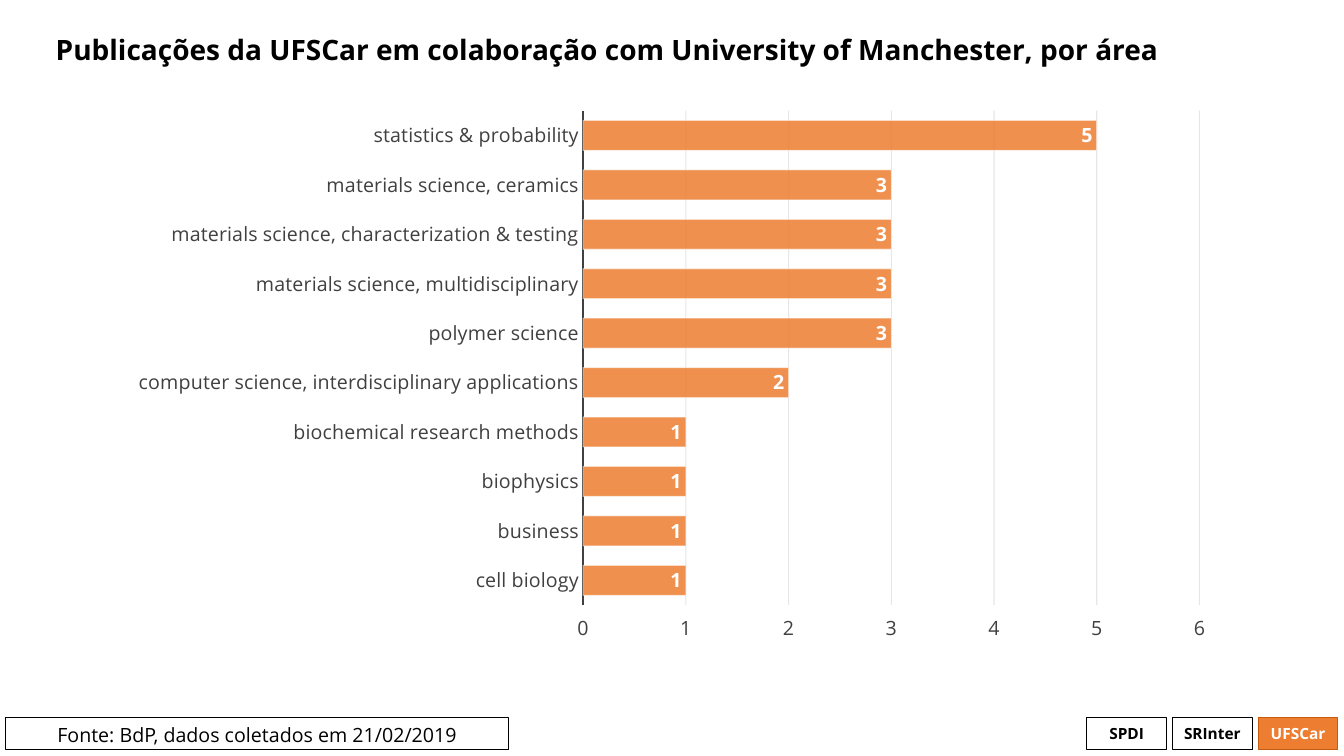
"""Build a slide with a bar chart of joint publications by research area."""
from lxml import etree
from pptx import Presentation
from pptx.chart.data import CategoryChartData
from pptx.dml.color import RGBColor
from pptx.enum import chart as ch, shapes, text
from pptx.oxml import parse_xml
from pptx.oxml.ns import nsdecls, qn
from pptx.util import Cm, Pt

BLACK = RGBColor(0x00, 0x00, 0x00)
WHITE = RGBColor(0xFF, 0xFF, 0xFF)
GREY = RGBColor(0x40, 0x40, 0x40)
GRID = RGBColor(0x0D, 0x0D, 0x0D)
ORANGE = RGBColor(0xED, 0x7D, 0x31)
BROWN = RGBColor(0xC5, 0x5A, 0x11)

AREAS = {
    "statistics & probability": 5,
    "materials science, ceramics": 3,
    "materials science, characterization & testing": 3,
    "materials science, multidisciplinary": 3,
    "polymer science": 3,
    "computer science, interdisciplinary applications": 2,
    "biochemical research methods": 1,
    "biophysics": 1,
    "business": 1,
    "cell biology": 1,
}


def set_font(font, size, color, bold=False):
    values = {"name": "Open Sans", "size": Pt(size), "bold": bold}
    for name, value in values.items():
        setattr(font, name, value)
    font.color.rgb = color


def set_paint(fill, color, percent=100):
    fill.solid()
    fill.fore_color.rgb = color
    if percent < 100:
        clr = fill._xPr.find(".//" + qn("a:srgbClr"))
        etree.SubElement(clr, qn("a:alpha"), val=str(percent * 1000))


prs = Presentation()
prs.slide_width, prs.slide_height = Cm(33.87), Cm(19.05)
s = prs.slides.add_slide(prs.slide_layouts[5])

title = s.shapes.title
title.left, title.top, title.width, title.height = Cm(1.15), Cm(0.15), Cm(31.52), Cm(2.31)
tf = title.text_frame
tf.vertical_anchor = text.MSO_ANCHOR.MIDDLE
p = tf.paragraphs[0]
p.alignment = text.PP_ALIGN.LEFT
p.line_spacing = 0.9
r = p.add_run()
r.text = "Publicações da UFSCar em colaboração com University of Manchester, por área"
set_font(r.font, 20, BLACK, True)

tags = [("SPDI", None, BLACK, BLACK), ("SRInter", None, BLACK, BLACK), ("UFSCar", ORANGE, BROWN, WHITE)]
boxes = [(27.39 + 2.16 * i, 2.01, *tag, 11, True, text.MSO_ANCHOR.MIDDLE) for i, tag in enumerate(tags)]
boxes.append((0.15, 12.67, "Fonte: BdP, dados coletados em 21/02/2019", None, BLACK, BLACK, 14, False,
              text.MSO_ANCHOR.TOP))
for left, width, label, fill, line, color, size, bold, anchor in boxes:
    sp = s.shapes.add_shape(shapes.MSO_SHAPE.RECTANGLE, Cm(left), Cm(18.08), Cm(width), Cm(0.81))
    sp.shadow.inherit = False
    if fill is None:
        sp.fill.background()
    else:
        set_paint(sp.fill, fill)
    sp.line.width = Pt(0.75)
    sp.line.color.rgb = line
    tf = sp.text_frame
    tf.word_wrap = False
    tf.vertical_anchor = anchor
    p = tf.paragraphs[0]
    p.alignment = text.PP_ALIGN.CENTER
    r = p.add_run()
    r.text = label
    set_font(r.font, size, color, bold)

data = CategoryChartData()
data.categories = list(AREAS)
data.add_series("Series 1", list(AREAS.values()))
frame = s.shapes.add_chart(ch.XL_CHART_TYPE.BAR_CLUSTERED, Cm(2.94), Cm(2.51), Cm(27.99), Cm(14), data)
chart = frame.chart
chart.has_legend = False
chart.has_title = False
set_font(chart.font, 14, BLACK)

cat, val = chart.category_axis, chart.value_axis
axis_format = {
    cat: {"reverse_order": True, "has_major_gridlines": False},
    val: {"minimum_scale": 0, "maximum_scale": 6, "major_unit": 1, "has_major_gridlines": True,
          "tick_label_position": ch.XL_TICK_LABEL_POSITION.HIGH},
}
for axis, values in axis_format.items():
    values["major_tick_mark"] = values["minor_tick_mark"] = ch.XL_TICK_MARK.NONE
    for name, value in values.items():
        setattr(axis, name, value)
    set_font(axis.tick_labels.font, 14, GREY)
cat.format.line.width = Pt(1.5)
cat.format.line.color.rgb = GREY
val.format.line.fill.background()
grid = val.major_gridlines.format.line
grid.width = Pt(0.75)
set_paint(grid.fill, GRID, 10)

plot = chart.plots[0]
plot.gap_width = 65
plot.vary_by_categories = False
bars = plot.series[0]
set_paint(bars.format.fill, ORANGE, 85)
bars.format.line.width = Pt(0.75)
set_paint(bars.format.line.fill, WHITE, 50)
labels = bars.data_labels
labels.show_value = True
labels.position = ch.XL_LABEL_POSITION.INSIDE_END
set_font(labels.font, 14, WHITE, True)

plot_area = chart._chartSpace.chart.plotArea
for old in plot_area.findall(qn("c:layout")):
    plot_area.remove(old)
places = "".join(f'<c:{k} val="{v}"/>' for k, v in
                 {"layoutTarget": "inner", "xMode": "edge", "yMode": "edge",
                  "x": 0.42, "y": 0.02, "w": 0.555, "h": 0.89}.items())
plot_area.insert(0, parse_xml(f'<c:layout {nsdecls("c")}><c:manualLayout>{places}</c:manualLayout></c:layout>'))

prs.save("out.pptx")
